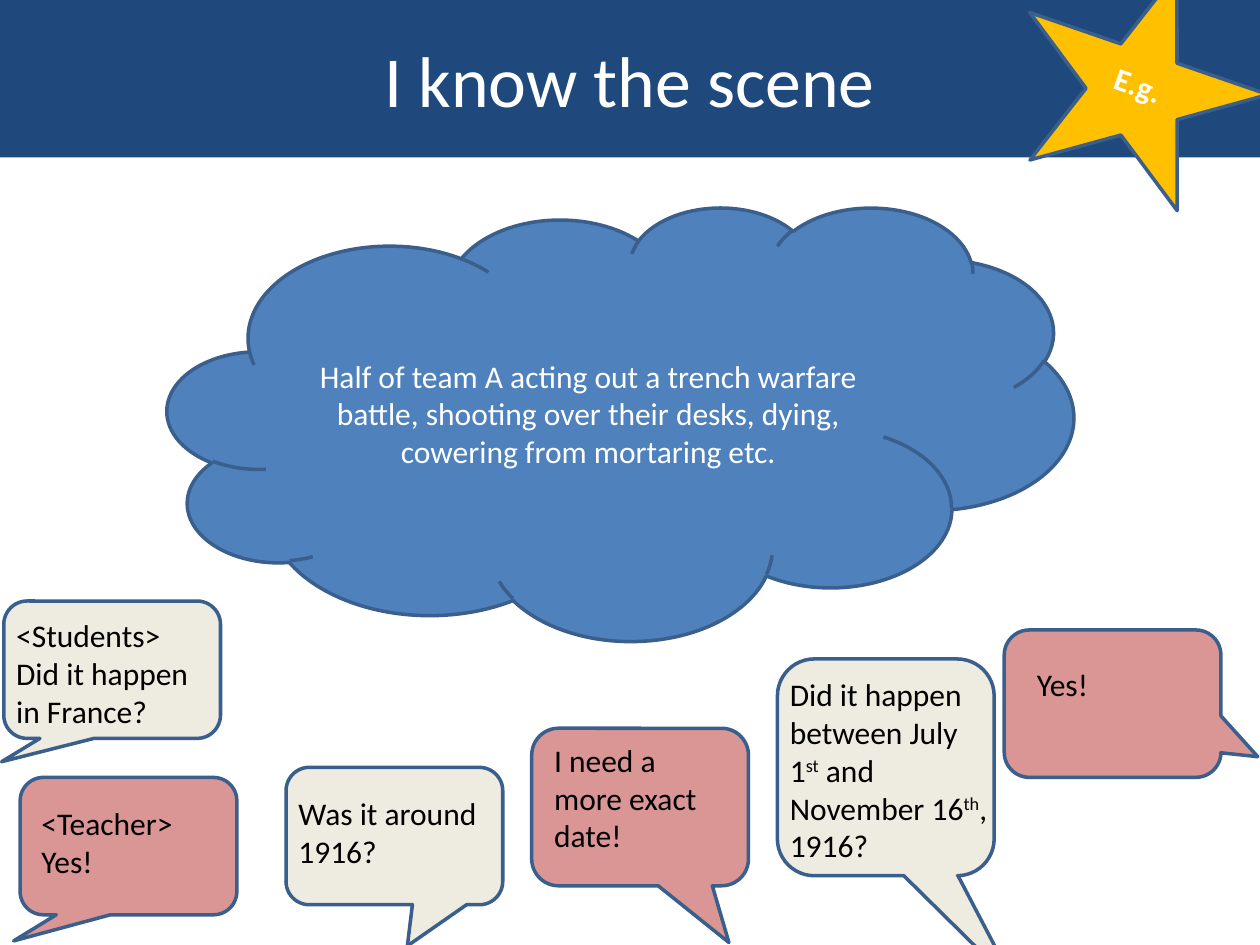
import pptx
import pptx.util
import pptx.dml.color
import pptx.enum.shapes
import pptx.enum.text

Inches = pptx.util.Inches
Kind = pptx.enum.shapes.MSO_SHAPE
Align = pptx.enum.text.PP_ALIGN
Anchor = pptx.enum.text.MSO_ANCHOR
Fit = pptx.enum.text.MSO_AUTO_SIZE

COLORS = {
    "navy": "1F497D", "blue": "4F81BD", "edge": "3A5F8C", "cream": "EEECE1",
    "rose": "D99694", "gold": "FFC000", "white": "FFFFFF", "black": "000000",
}


def shade(name):
    return pptx.dml.color.RGBColor.from_string(COLORS[name])


class Scene:
    """Holds the shared style and the slide being filled."""

    font = {"name": "Calibri", "size": pptx.util.Pt(18), "bold": False}

    def __init__(self, slide):
        self.slide = slide

    def shape(self, home, kind, box, fill, edge=True, turn=0):
        item = home.add_shape(kind, *map(Inches, box))
        item.shadow.inherit = False
        item.fill.solid()
        item.fill.fore_color.rgb = shade(fill)
        item.rotation = turn
        if edge:
            item.line.color.rgb = shade("edge")
            item.line.width = pptx.util.Pt(2)
        else:
            item.line.fill.background()
        return item

    def label(self, item, parts, color, align, frame, **extra):
        """Fill a shape with (text, baseline) parts; a newline is a line break."""
        for key, value in frame.items():
            setattr(item.text_frame, key, value)
        para = item.text_frame.paragraphs[0]
        para.alignment = align
        for text, base in parts:
            for row, line in enumerate(text.split("\n")):
                if row:
                    para.add_line_break()
                run = para.add_run()
                run.text = line
                for key, value in {**self.font, **extra}.items():
                    setattr(run.font, key, value)
                run.font.color.rgb = shade(color)
                if base:
                    run.font._element.set("baseline", str(base))

    def panel(self, kind, box, fill, text, edge=True, **extra):
        item = self.shape(self.slide.shapes, kind, box, fill, edge)
        frame = {"word_wrap": True, "vertical_anchor": Anchor.MIDDLE}
        self.label(item, [(text, 0)], "white", Align.CENTER, frame, **extra)

    def speech(self, box, tail, fill, area, parts):
        home = self.slide.shapes.add_group_shape().shapes
        bubble = self.shape(home, Kind.ROUNDED_RECTANGULAR_CALLOUT, box, fill)
        for spot, value in enumerate((*tail, 0.17)):
            bubble.adjustments[spot] = value
        note = home.add_textbox(*map(Inches, area))
        frame = {"word_wrap": True, "vertical_anchor": Anchor.TOP,
                 "auto_size": Fit.SHAPE_TO_FIT_TEXT}
        self.label(note, parts, "black", Align.LEFT, frame)

    def badge(self, box, area, text, turn):
        home = self.slide.shapes.add_group_shape().shapes
        self.shape(home, Kind.STAR_5_POINT, box, "gold", turn=turn)
        note = home.add_textbox(*map(Inches, area))
        note.rotation = turn
        frame = {"word_wrap": False, "auto_size": Fit.SHAPE_TO_FIT_TEXT}
        self.label(note, [(text, 0)], "white", Align.RIGHT, frame, bold=True)


# Bubble box, tail tip, fill, text area, text parts
SPEECH = [
    ((0.03, 4.77, 1.72, 1.09), (-0.51, 0.67), "cream", (0.03, 4.84, 1.8, 1.01),
     [("<Students>\nDid it happen in France?", 0)]),
    ((4.22, 5.78, 1.72, 1.25), (0.41, 0.86), "rose", (4.3, 5.83, 1.56, 1.15),
     [("I need a more exact date!", 0)]),
    ((0.16, 6.17, 1.72, 1.09), (-0.53, 0.69), "rose", (0.23, 6.33, 1.41, 0.71),
     [("<Teacher>\nYes!", 0)]),
    ((2.27, 6.09, 1.72, 1.09), (0.06, 0.8), "cream", (2.27, 6.25, 1.8, 0.71),
     [("Was it around 1916?", 0)]),
    ((7.97, 5, 1.72, 1.17), (0.67, 0.36), "rose", (8.13, 5.23, 1.41, 0.4),
     [("Yes!", 0)]),
    ((6.17, 5.23, 1.72, 1.72), (0.6, 1.01), "cream", (6.17, 5.31, 1.8, 1.62),
     [("Did it happen between July 1", 0), ("st", 30000),
      (" and November 16", 0), ("th", 30000), (", 1916?", 0)]),
]


def main():
    deck = pptx.Presentation()
    deck.slide_width, deck.slide_height = Inches(10), Inches(7.5)
    scene = Scene(deck.slides.add_slide(deck.slide_layouts[6]))
    scene.panel(Kind.RECTANGLE, (0, 0, 10, 1.25), "navy", "I know the scene",
                edge=False, size=pptx.util.Pt(41))
    for item in SPEECH:
        scene.speech(*item)
    scene.panel(Kind.CLOUD, (1.33, 1.64, 7.19, 3.44), "blue",
                "Half of team A acting out a trench warfare battle, shooting "
                "over their desks, dying, cowering from mortaring etc.")
    scene.badge((8.05, -0.27, 2, 1.79), (8.74, 0.47, 0.58, 0.41), "E.g.", 19)
    deck.save("out.pptx")


if __name__ == "__main__":
    main()
